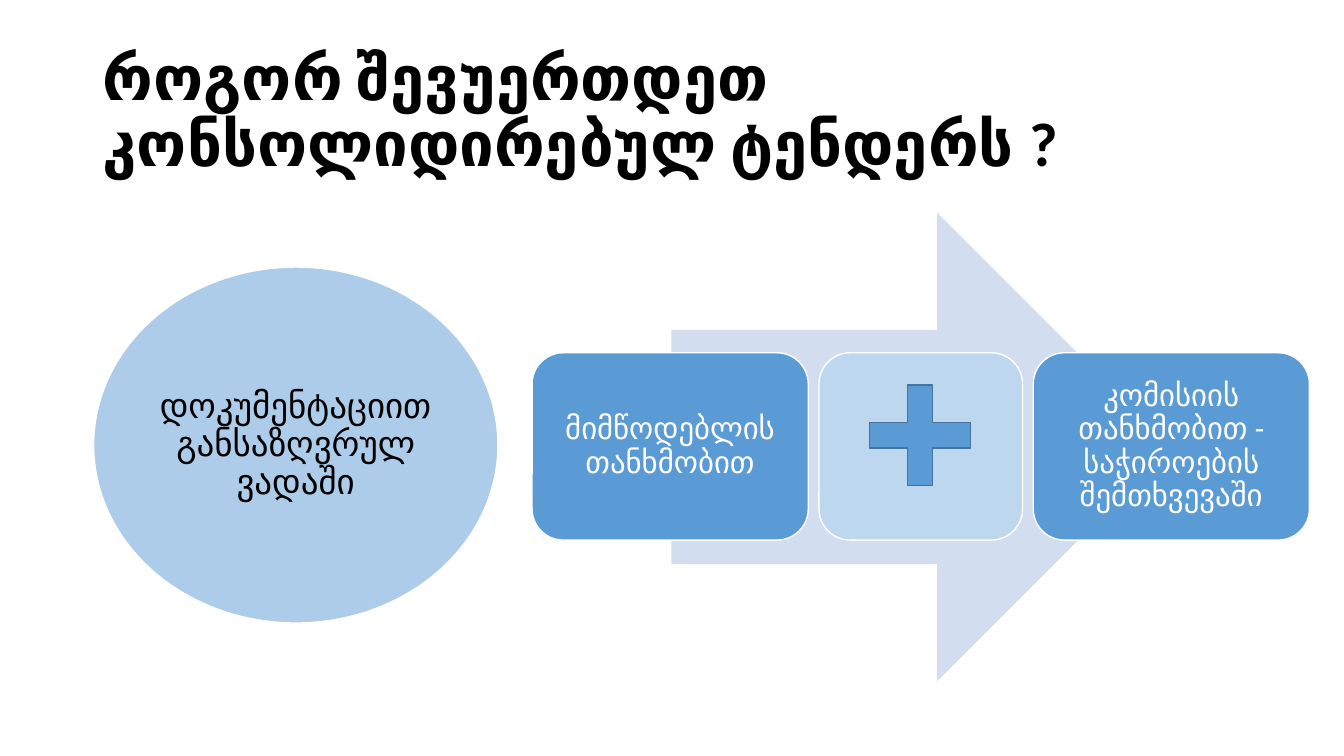
from dataclasses import dataclass
from typing import Optional

from lxml import etree
from pptx import Presentation
from pptx import util as u
from pptx.dml import color
from pptx.enum import shapes, text
from pptx.oxml import ns

FONT = "Calibri"
BLUE = "5B9BD5"
PALE = "BDD7EE"
WHITE = "FFFFFF"
BLACK = "000000"
KIND = shapes.MSO_SHAPE


@dataclass
class Label:
    words: str
    size: int
    ink: str
    inset: float
    bold: bool = False
    align: Optional[text.PP_ALIGN] = text.PP_ALIGN.CENTER


@dataclass
class Figure:
    kind: KIND
    left: float
    top: float
    width: float
    height: float
    fill: str
    edge: Optional[str] = WHITE
    label: Optional[Label] = None
    alpha: Optional[int] = None
    adjust: Optional[float] = None


@dataclass
class Card:
    width: float
    fill: str
    words: str = ""


def tint(code: str) -> color.RGBColor:
    return color.RGBColor.from_string(code)


def write(shape, label: Label) -> None:
    frame = shape.text_frame
    frame.word_wrap = True
    frame.vertical_anchor = text.MSO_ANCHOR.MIDDLE
    frame.margin_left = frame.margin_right = u.Cm(label.inset)
    frame.margin_top = frame.margin_bottom = u.Cm(label.inset)
    para = frame.paragraphs[0]
    para.alignment = label.align
    para.line_spacing = 0.9
    run = para.add_run()
    run.text = label.words
    run.font.name = FONT
    run.font.size = u.Pt(label.size)
    run.font.bold = label.bold
    run.font.color.rgb = tint(label.ink)


def draw(slide, item: Figure) -> None:
    shape = slide.shapes.add_shape(
        item.kind, u.Cm(item.left), u.Cm(item.top), u.Cm(item.width), u.Cm(item.height)
    )
    shape.shadow.inherit = False
    shape.fill.solid()
    shape.fill.fore_color.rgb = tint(item.fill)
    if item.alpha is not None:
        hue = shape.fill._xPr.find(ns.qn("a:solidFill"))[0]
        etree.SubElement(hue, ns.qn("a:alpha")).set("val", str(item.alpha * 1000))
    if item.edge:
        shape.line.color.rgb = tint(item.edge)
        shape.line.width = u.Pt(1)
    else:
        shape.line.fill.background()
    if item.adjust is not None:
        shape.adjustments[0] = item.adjust
    if item.label:
        write(shape, item.label)


def main() -> None:
    deck = Presentation()
    deck.slide_width = u.Cm(33.87)
    deck.slide_height = u.Cm(19.05)
    slide = deck.slides.add_slide(deck.slide_layouts[6])

    title = slide.shapes.add_textbox(u.Cm(2.34), u.Cm(1.02), u.Cm(29.21), u.Cm(3.68))
    write(title, Label("როგორ შევუერთდეთ კონსოლიდირებულ ტენდერს ?", 44, BLACK, 0.25,
                       True, text.PP_ALIGN.LEFT))

    draw(slide, Figure(KIND.RIGHT_ARROW, 16.92, 5.36, 12.6, 11.81, "D2DEEF", None))

    cards = [
        Card(6.96, BLUE, "მიმწოდებლის თანხმობით"),
        Card(5.13, PALE),
        Card(6.96, BLUE, "კომისიის თანხმობით - საჭიროების შემთხვევაში"),
    ]
    left, gap = 13.41, 0.27
    for card in cards:
        label = Label(card.words, 22, WHITE, 0.23) if card.words else None
        draw(slide, Figure(KIND.ROUNDED_RECTANGLE, left, 8.89, card.width, 4.72,
                           card.fill, label=label))
        left += card.width + gap

    term = Label("დოკუმენტაციით განსაზღვრულ ვადაში", 25, BLACK, 0.08)
    draw(slide, Figure(KIND.OVAL, 2.36, 6.73, 10.19, 8.97, BLUE, label=term, alpha=50))
    draw(slide, Figure(KIND.CROSS, 21.92, 9.7, 2.54, 2.54, BLUE, "43739E", adjust=0.375))

    deck.save("out.pptx")


if __name__ == "__main__":
    main()
